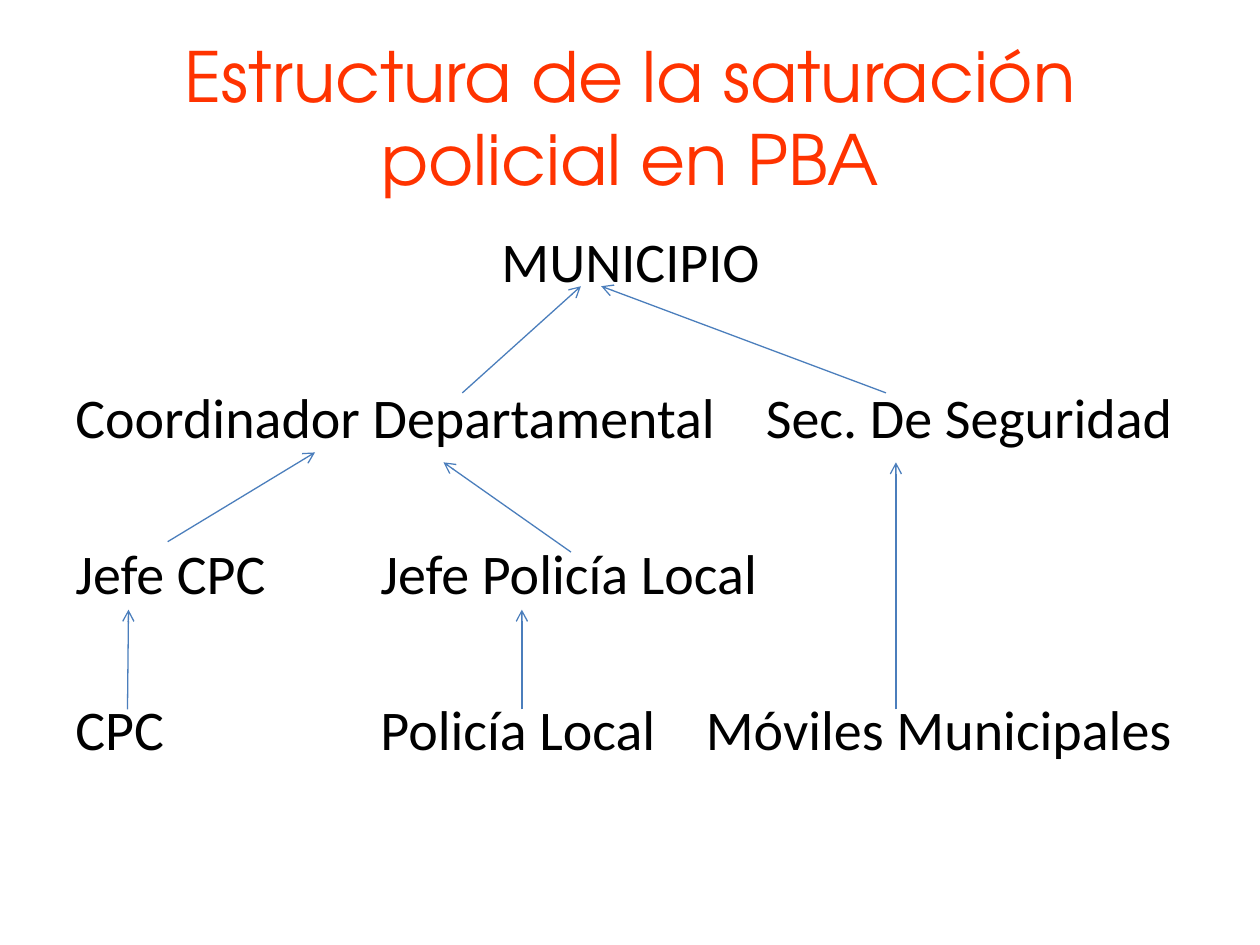
from lxml import etree
from pptx import Presentation
from pptx.dml.color import RGBColor
from pptx.enum.shapes import MSO_CONNECTOR
from pptx.enum.text import MSO_ANCHOR, PP_ALIGN
from pptx.oxml.ns import qn
from pptx.util import Cm, Pt

STRAIGHT = MSO_CONNECTOR.STRAIGHT
MIDDLE = MSO_ANCHOR.MIDDLE
CENTER = PP_ALIGN.CENTER

TITLE_BOX = (1.27, 0.76, 22.86, 3.18)
CHART_BOX = (1.27, 4.45, 22.86, 12.57)

LEVELS = [
    ("\tMUNICIPIO", [8.59]),
    ("Coordinador Departamental\tSec. De Seguridad", [13.92]),
    ("Jefe CPC\tJefe Policía Local", [6.15]),
    ("CPC\tPolicía Local\tMóviles Municipales", [6.15, 12.71]),
]

REPORTS = [
    ((1.3, 9.85), (1.32, 7.84)),
    ((9.25, 9.85), (9.25, 7.84)),
    ((16.79, 9.85), (16.79, 4.87)),
    ((2.11, 6.47), (5.08, 4.67)),
    ((10.24, 6.68), (7.67, 4.87)),
    ((8.05, 3.47), (10.44, 1.32)),
    ((16.59, 3.47), (10.85, 1.32)),
]


def color(value):
    """Turn a hex string into a colour."""
    return RGBColor.from_string(value)


def add_frame(slide, box):
    """Add a wrapping text box and return its text frame."""
    frame = slide.shapes.add_textbox(*(Cm(length) for length in box)).text_frame
    frame.word_wrap = True
    return frame


def format_runs(paragraph, font_name, size, hex_color):
    """Set the font of every run in a paragraph."""
    for run in paragraph.runs:
        run.font.name = font_name
        run.font.size = Pt(size)
        run.font.color.rgb = color(hex_color)


def set_tabs(paragraph, stops):
    """Give a paragraph left tab stops, in centimetres."""
    tabs = etree.SubElement(paragraph._p.get_or_add_pPr(), qn("a:tabLst"))
    for stop in stops:
        etree.SubElement(tabs, qn("a:tab"), pos=str(Cm(stop)), algn="l")


def add_arrow(slide, box, start, end):
    """Draw an arrow between two points measured from the box corner."""
    left, top = box[:2]
    points = [Cm(origin + offset) for point in (start, end)
              for origin, offset in zip((left, top), point)]
    arrow = slide.shapes.add_connector(STRAIGHT, *points)
    arrow.line.color.rgb = color("4B7EBC")
    arrow.line.width = Pt(0.75)
    etree.SubElement(arrow.line._get_or_add_ln(), qn("a:tailEnd"), type="arrow")
    etree.SubElement(arrow._element.spPr, qn("a:effectLst"))


def add_title(slide, box):
    """Write the centred title."""
    frame = add_frame(slide, box)
    frame.vertical_anchor = MIDDLE
    frame.text = "Estructura de la saturación policial en PBA"
    heading = frame.paragraphs[0]
    heading.alignment = CENTER
    format_runs(heading, "TeX Gyre Adventor", 39.6, "FF3300")


def add_hierarchy(slide, box):
    """Write the levels of command and the arrows between them."""
    frame = add_frame(slide, box)
    frame.text = "\n".join(names for names, _ in LEVELS)
    for level, (_, stops) in zip(frame.paragraphs, LEVELS):
        level.space_after = Pt(50.6)
        set_tabs(level, stops)
        format_runs(level, "Calibri", 32, "000000")
    for start, end in REPORTS:
        add_arrow(slide, box, start, end)


def main():
    """Build and save the slide."""
    presentation = Presentation()
    presentation.slide_width = Cm(25.4)
    presentation.slide_height = Cm(19.05)
    slide = presentation.slides.add_slide(presentation.slide_layouts[6])
    add_title(slide, TITLE_BOX)
    add_hierarchy(slide, CHART_BOX)
    presentation.save("out.pptx")


if __name__ == "__main__":
    main()
